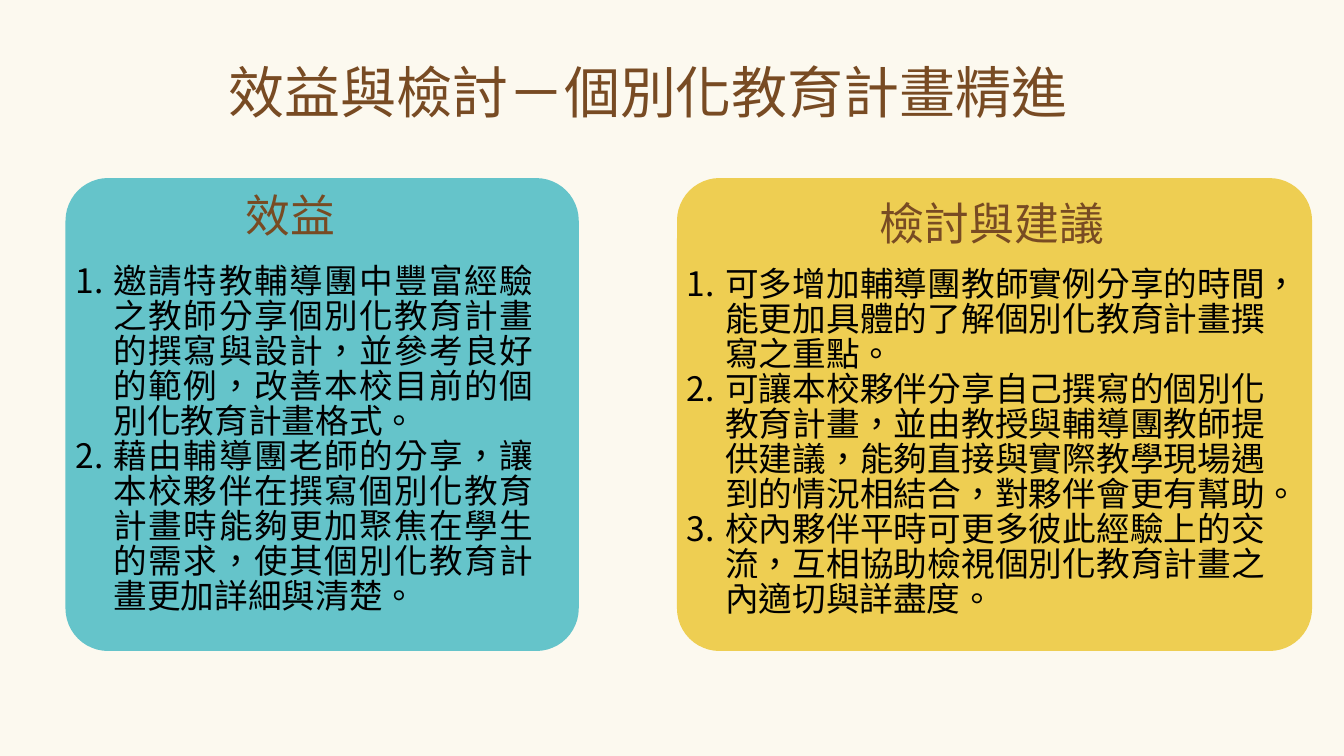
from lxml.etree import SubElement
from pptx import Presentation
from pptx.dml.color import RGBColor as RGB
from pptx.enum.lang import MSO_LANGUAGE_ID as LANG
from pptx.enum.shapes import MSO_SHAPE as SHAPE
from pptx.enum.text import MSO_AUTO_SIZE as FIT, PP_ALIGN as ALIGN
from pptx.oxml.ns import qn
from pptx.util import Inches, Pt

C = {"paper": "FCF9EF", "brown": "784B23", "black": "000000",
     "teal": "65C4CA", "yellow": "EECE52"}

prs = Presentation()
prs.slide_width, prs.slide_height = Inches(13.33), Inches(7.5)
col, row = prs.slide_width / 160, prs.slide_height / 90
s = prs.slides.add_slide(prs.slide_layouts[6])
s.background.fill.solid()
s.background.fill.fore_color.rgb = RGB.from_string(C["paper"])


def grid(x, y, w, h):
    return int(x * col), int(y * row), int(w * col), int(h * row)


def add_text(*lines, at, size, color="brown", numbered=False):
    tf = s.shapes.add_textbox(*grid(*at)).text_frame
    tf.word_wrap = True
    tf.auto_size = FIT.SHAPE_TO_FIT_TEXT
    for i, line in enumerate(lines):
        p = tf.add_paragraph() if i else tf.paragraphs[0]
        p.alignment = ALIGN.JUSTIFY if numbered else ALIGN.CENTER
        if numbered:
            p.line_spacing = Pt(25)
            pPr = p._p.get_or_add_pPr()
            pPr.set("marL", str(Inches(0.38)))
            pPr.set("indent", str(-Inches(0.38)))
            SubElement(pPr, qn("a:buFont")).set("typeface", "+mj-ea")
            SubElement(pPr, qn("a:buAutoNum")).set("type", "arabicPeriod")
        r = p.add_run()
        r.text = line
        r.font.name = "Times New Roman"
        r.font.size = Pt(size)
        r.font.language_id = LANG.TRADITIONAL_CHINESE
        r.font.color.rgb = RGB.from_string(C[color])


add_text("效益與檢討－個別化教育計畫精進", at=(25.3, 6.2, 103.7, 9.2), size=40)

cards = [
    ("yellow", 80.6, 75.6, "檢討與建議", (103.1, 22.7), (31.3, 71.2), [
        "可多增加輔導團教師實例分享的時間，能更加具體的了解個別化教育計畫撰寫之重點。",
        "可讓本校夥伴分享自己撰寫的個別化教育計畫，並由教授與輔導團教師提供建議，能夠直接與實際教學現場遇到的情況相結合，對夥伴會更有幫助。",
        "校內夥伴平時可更多彼此經驗上的交流，互相協助檢視個別化教育計畫之內適切與詳盡度。"]),
    ("teal", 7.8, 61.1, "效益", (19.6, 21.8), (31, 56.9), [
        "邀請特教輔導團中豐富經驗之教師分享個別化教育計畫的撰寫與設計，並參考良好的範例，改善本校目前的個別化教育計畫格式。",
        "藉由輔導團老師的分享，讓本校夥伴在撰寫個別化教育計畫時能夠更加聚焦在學生的需求，使其個別化教育計畫更加詳細與清楚。"]),
]
for color, x, w, heading, head_at, (body_y, body_w), points in cards:
    sp = s.shapes.add_shape(SHAPE.ROUNDED_RECTANGLE, *grid(x, 21.2, w, 56.3))
    sp.adjustments[0] = 0.09
    sp.shadow.inherit = False
    sp.fill.solid()
    sp.fill.fore_color.rgb = RGB.from_string(C[color])
    sp.line.fill.background()
    add_text(heading, at=(*head_at, 30, 7.7), size=32)
    add_text(*points, at=(x, body_y, body_w, 43.3), size=24, color="black", numbered=True)

prs.save("out.pptx")
